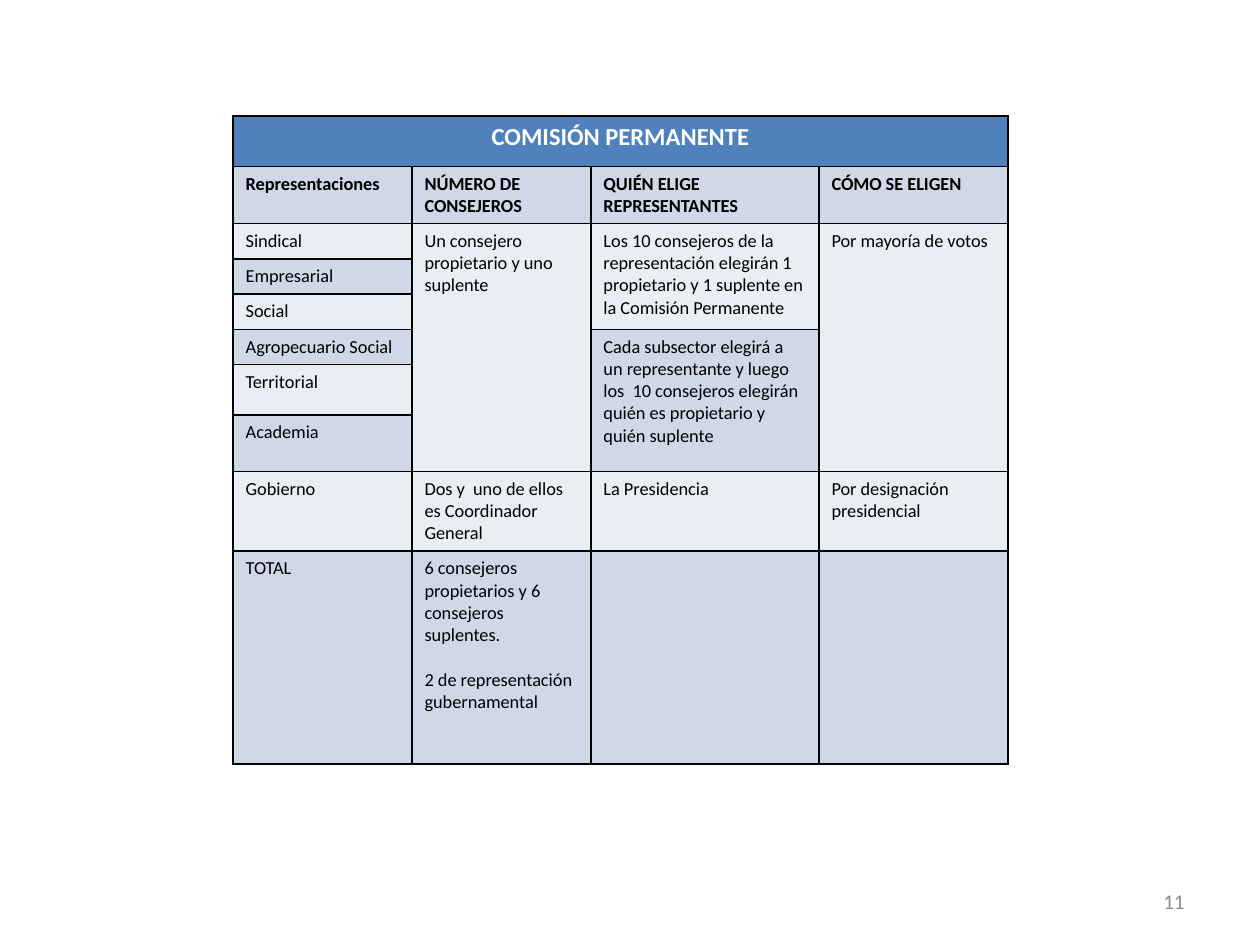
from lxml import etree
from pptx import Presentation
from pptx.dml.color import RGBColor
from pptx.enum import text
from pptx.oxml import ns
from pptx.util import Inches, Pt

COLORS = {
    "header": "4F81BD", "dark_band": "D0D8E8", "light_band": "E9EDF4",
    "white": "FFFFFF", "black": "000000", "gray": "8C8C8C",
}
FONT = "Calibri"
BODY_SIZE = 10.5


def format_text(paragraph, size, color, bold=False):
    for run in paragraph.runs:
        run.font.name = FONT
        run.font.size = Pt(size)
        run.font.bold = bold
        run.font.color.rgb = RGBColor.from_string(COLORS[color])


def add_borders(cell):
    properties = cell._tc.get_or_add_tcPr()
    for side in ("lnL", "lnR", "lnT", "lnB"):
        line = etree.SubElement(properties, ns.qn(f"a:{side}"), w=str(Pt(1)))
        fill = etree.SubElement(line, ns.qn("a:solidFill"))
        etree.SubElement(fill, ns.qn("a:srgbClr"), val=COLORS["black"])


presentation = Presentation()
presentation.slide_width = Inches(10)
presentation.slide_height = Inches(7.5)
slide = presentation.slides.add_slide(presentation.slide_layouts[6])

# Table contents; empty strings are blank or merged cells
rows = [
    ["COMISIÓN PERMANENTE", "", "", ""],
    ["Representaciones", "NÚMERO DE CONSEJEROS", "QUIÉN ELIGE REPRESENTANTES", "CÓMO SE ELIGEN"],
    ["Sindical", "Un consejero propietario y uno suplente",
     "Los 10 consejeros de la representación elegirán 1 propietario y 1 suplente "
     "en la Comisión Permanente", "Por mayoría de votos"],
    ["Empresarial", "", "", ""],
    ["Social", "", "", ""],
    ["Agropecuario Social", "",
     "Cada subsector elegirá a un representante y luego los  10 consejeros elegirán "
     "quién es propietario y quién suplente", ""],
    ["Territorial", "", "", ""],
    ["Academia", "", "", ""],
    ["Gobierno", "Dos y  uno de ellos es Coordinador General", "La Presidencia",
     "Por designación presidencial"],
    ["TOTAL", "6 consejeros propietarios y 6\nconsejeros suplentes.\n"
     "2 de representación gubernamental", "", ""],
]
column_widths = [1.42, 1.42, 1.81, 1.5]
row_heights = [0.4, 0.45, 0.28, 0.28, 0.28, 0.28, 0.4, 0.45, 0.63, 1.69]

# Table grid
table = slide.shapes.add_table(
    len(rows), len(column_widths), Inches(1.85), Inches(0.92),
    Inches(sum(column_widths)), Inches(sum(row_heights))).table
for column, width in zip(table.columns, column_widths):
    column.width = Inches(width)
for row, height in zip(table.rows, row_heights):
    row.height = Inches(height)

# Cell text, borders and banding
for row_index, row in enumerate(rows):
    band = "header" if row_index == 0 else ("light_band", "dark_band")[row_index % 2]
    for column_index, content in enumerate(row):
        cell = table.cell(row_index, column_index)
        cell.text = content
        add_borders(cell)
        cell.fill.solid()
        cell.fill.fore_color.rgb = RGBColor.from_string(COLORS[band])
        for paragraph in cell.text_frame.paragraphs:
            if row_index == 0:
                paragraph.alignment = text.PP_ALIGN.CENTER
                format_text(paragraph, 14, "white", bold=True)
            else:
                format_text(paragraph, BODY_SIZE, "black", bold=row_index == 1)
        if not content:
            # Keep empty cells from forcing taller rows
            etree.SubElement(cell.text_frame.paragraphs[0]._p, ns.qn("a:endParaRPr"),
                             sz=str(int(BODY_SIZE * 100)))

# Gap before the government line of the total
table.cell(9, 1).text_frame.paragraphs[-1].space_before = Pt(12.75)

# Merged cells: first row, first column, last row, last column
for top, left, bottom, right in [(0, 0, 0, 3), (2, 1, 7, 1), (2, 2, 4, 2),
                                 (5, 2, 7, 2), (2, 3, 7, 3)]:
    table.cell(top, left).merge(table.cell(bottom, right))

# Page number
page_number = slide.shapes.add_textbox(Inches(7.17), Inches(6.95), Inches(2.33), Inches(0.4))
frame = page_number.text_frame
frame.word_wrap = True
frame.vertical_anchor = text.MSO_ANCHOR.MIDDLE
frame.text = "11"
frame.paragraphs[0].alignment = text.PP_ALIGN.RIGHT
format_text(frame.paragraphs[0], 12, "gray")

presentation.save("out.pptx")
